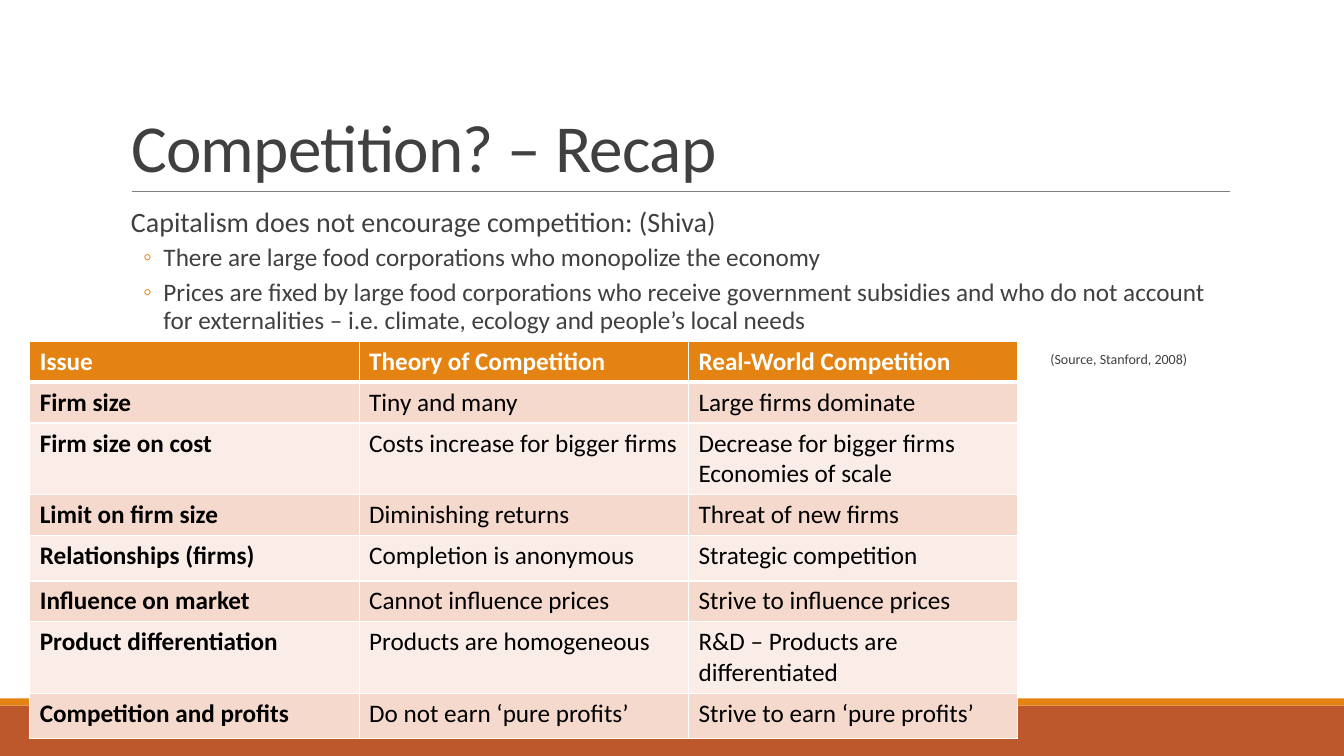
from dataclasses import dataclass

import pptx
import pptx.dml.color
import pptx.enum.shapes
import pptx.enum.text
import pptx.oxml
import pptx.oxml.ns
import pptx.util
from pptx.util import Cm, Pt


@dataclass(frozen=True)
class Theme:
    font: str = "Calibri"
    text: str = "404040"
    orange: str = "E48312"
    rust: str = "BD582C"
    rule: str = "808080"
    white: str = "FFFFFF"
    black: str = "000000"
    bands: tuple = ("F5D9CC", "FAEDE7")
    title_size: int = 48
    lead_size: int = 20
    text_size: int = 18
    source_size: int = 10


THEME = Theme()

COMPETITION_ROWS = [
    ("Issue", "Theory of Competition", "Real-World Competition"),
    ("Firm size", "Tiny and many", "Large firms dominate"),
    ("Firm size on cost", "Costs increase for bigger firms",
     "Decrease for bigger firms\nEconomies of scale"),
    ("Limit on firm size", "Diminishing returns", "Threat of new firms"),
    ("Relationships (firms)", "Completion is anonymous", "Strategic competition"),
    ("Influence on market", "Cannot influence prices", "Strive to influence prices"),
    ("Product differentiation", "Products are homogeneous",
     "R&D – Products are differentiated"),
    ("Competition and profits", "Do not earn ‘pure profits’",
     "Strive to earn ‘pure profits’"),
]
ROW_HEIGHTS = [1.03, 1.03, 1.81, 1.03, 1.14, 1.03, 1.81, 1.14]


def rgb(colour):
    return pptx.dml.color.RGBColor.from_string(colour)


def add_xml(parent, tag, content="", **attributes):
    listed = "".join(f' {name}="{value}"' for name, value in attributes.items())
    namespace = pptx.oxml.ns.nsdecls("a")
    parent.append(pptx.oxml.parse_xml(
        f"<a:{tag} {namespace}{listed}>{content}</a:{tag}>"))


def solid(colour):
    return f'<a:solidFill><a:srgbClr val="{colour}"/></a:solidFill>'


def add_run(paragraph, wording, size, colour, bold=False):
    run = paragraph.add_run()
    run.text = wording
    run.font.name = THEME.font
    run.font.size = Pt(size)
    run.font.bold = bold
    run.font.color.rgb = rgb(colour)
    return run


def place(shape, left, top, width, height):
    shape.left, shape.top = Cm(left), Cm(top)
    shape.width, shape.height = Cm(width), Cm(height)


def add_bar(slide, top, height, colour):
    bar = slide.shapes.add_shape(
        pptx.enum.shapes.MSO_SHAPE.RECTANGLE, 0, Cm(top), Cm(33.87), Cm(height))
    bar.shadow.inherit = False
    bar.fill.solid()
    bar.fill.fore_color.rgb = rgb(colour)
    bar.line.fill.background()


def add_title_rule(slide):
    rule = slide.shapes.add_connector(
        pptx.enum.shapes.MSO_CONNECTOR.STRAIGHT, Cm(3.32), Cm(4.83), Cm(31), Cm(4.83))
    rule.line.color.rgb = rgb(THEME.rule)
    rule.line.width = Pt(0.5)
    add_xml(rule.line._get_or_add_ln().getparent(), "effectLst")


def fill_title(title, wording):
    place(title, 3.05, 0.79, 27.94, 4.04)
    frame = title.text_frame
    frame.word_wrap = True
    frame.auto_size = pptx.enum.text.MSO_AUTO_SIZE.NONE
    frame.vertical_anchor = pptx.enum.text.MSO_ANCHOR.BOTTOM
    heading = frame.paragraphs[0]
    heading.alignment = pptx.enum.text.PP_ALIGN.LEFT
    heading.line_spacing = 0.85
    run = add_run(heading, wording, THEME.title_size, THEME.text)
    run.font._element.set("spc", "-50")


def format_point(paragraph, indent, hanging, before, after, bullet=None):
    """Indents are in centimetres, spacing in points."""
    paragraph.line_spacing = 0.9
    paragraph.space_before, paragraph.space_after = Pt(before), Pt(after)
    properties = paragraph._p.get_or_add_pPr()
    properties.set("marL", str(Cm(indent)))
    properties.set("indent", str(-Cm(hanging)))
    if bullet:
        add_xml(properties, "buClr", f'<a:srgbClr val="{THEME.orange}"/>')
        add_xml(properties, "buChar", char=bullet)
    else:
        add_xml(properties, "buNone")


def fill_argument(body, lead, points, source):
    place(body, 3.05, 5.13, 27.94, 11.18)
    frame = body.text_frame
    frame.word_wrap = True
    frame.auto_size = pptx.enum.text.MSO_AUTO_SIZE.NONE
    frame.margin_left = frame.margin_right = 0
    claim = frame.paragraphs[0]
    format_point(claim, 0.25, 0, 12, 2)
    add_run(claim, lead, THEME.lead_size, THEME.text)
    for wording in points:
        point = frame.add_paragraph()
        point.level = 1
        format_point(point, 1.07, 0.51, 2, 4, "◦")
        add_run(point, wording, THEME.text_size, THEME.text)
    credit = frame.add_paragraph()
    credit.level = 1
    format_point(credit, 23.42, 0, 9, 4)
    add_run(credit, source, THEME.source_size, THEME.text)


def format_cell(cell, row):
    """White borders, heavier between the header and the first row."""
    properties = cell._tc.get_or_add_tcPr()
    widths = {"lnL": 1, "lnR": 1, "lnT": 3 if row == 1 else 1, "lnB": 3 if row == 0 else 1}
    for side, width in widths.items():
        add_xml(properties, side, solid(THEME.white), w=Pt(width))
    cell.fill.solid()
    cell.fill.fore_color.rgb = rgb(THEME.bands[(row - 1) % 2] if row else THEME.orange)


def add_competition_table(slide):
    table = slide.shapes.add_table(
        len(COMPETITION_ROWS), 3, Cm(0.75), Cm(8.6), Cm(24.9), Cm(sum(ROW_HEIGHTS))).table
    for row, (wordings, height) in enumerate(zip(COMPETITION_ROWS, ROW_HEIGHTS)):
        table.rows[row].height = Cm(height)
        for column, wording in enumerate(wordings):
            cell = table.cell(row, column)
            format_cell(cell, row)
            for number, line in enumerate(wording.split("\n")):
                frame = cell.text_frame
                paragraph = frame.add_paragraph() if number else frame.paragraphs[0]
                add_run(paragraph, line, THEME.text_size,
                        THEME.black if row else THEME.white, row == 0 or column == 0)


def main():
    deck = pptx.Presentation()
    deck.slide_width, deck.slide_height = Cm(33.87), Cm(19.05)
    slide = deck.slides.add_slide(deck.slide_layouts[1])
    add_bar(slide, 17.78, 1.27, THEME.rust)
    add_bar(slide, 17.6, 0.18, THEME.orange)
    add_title_rule(slide)
    fill_title(slide.shapes.title, "Competition? – Recap")
    fill_argument(
        slide.placeholders[1],
        "Capitalism does not encourage competition: (Shiva)",
        ["There are large food corporations who monopolize the economy",
         "Prices are fixed by large food corporations who receive government subsidies "
         "and who do not account for externalities – i.e. climate, ecology and people’s "
         "local needs"],
        "(Source, Stanford, 2008)")
    add_competition_table(slide)
    deck.save("out.pptx")


if __name__ == "__main__":
    main()
